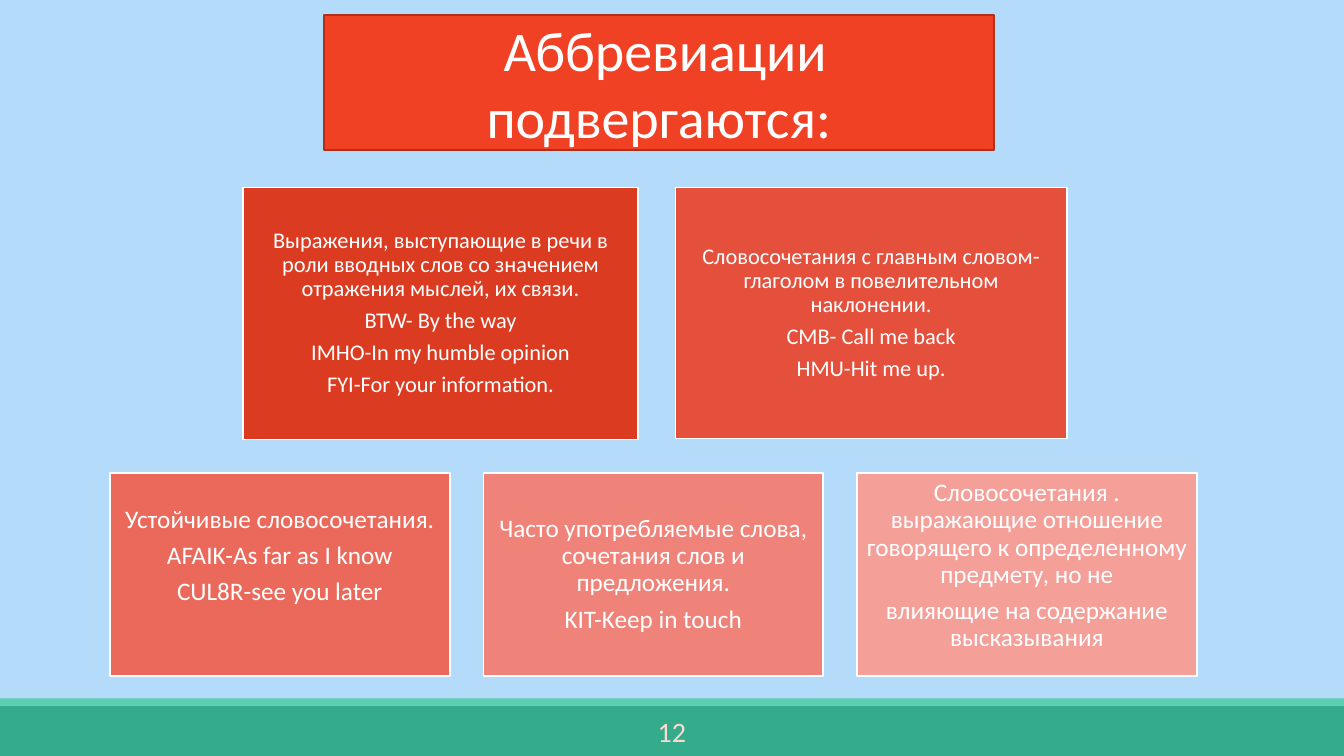
from dataclasses import dataclass

from pptx import Presentation
from pptx.dml.color import RGBColor
from pptx.enum.shapes import MSO_SHAPE
from pptx.enum.text import MSO_ANCHOR, PP_ALIGN
from pptx.shapes.autoshape import Shape
from pptx.slide import Slide
from pptx.util import Inches, Pt

RECTANGLE = MSO_SHAPE.RECTANGLE
CENTER = PP_ALIGN.CENTER
TOP = MSO_ANCHOR.TOP
MIDDLE = MSO_ANCHOR.MIDDLE


@dataclass(frozen=True)
class Theme:
    font: str = "Calibri"
    background: str = "B4DCFA"
    footer: str = "34AC8B"
    footer_edge: str = "5DCEAF"
    page_number: str = "FCD9D3"
    text: str = "FFFFFF"
    card_line: str = "FFFFFF"
    title_fill: str = "F14124"
    title_line: str = "B2301B"
    line_width: float = 1.25
    title_size: int = 40
    page_number_size: int = 20
    upper_size: int = 16
    lower_size: int = 18


THEME = Theme()


@dataclass(frozen=True)
class Box:
    left: float
    top: float
    width: float
    height: float


@dataclass(frozen=True)
class Card:
    box: Box
    fill: str
    size: int
    paragraphs: tuple[str, ...]
    anchor: MSO_ANCHOR = MIDDLE
    bottom_inset: float = 0.07


def lower_box(column: int) -> Box:
    return Box(1.09 + column * 3.705, 4.69, 3.37, 2.02)


CARDS = (
    Card(Box(2.41, 1.86, 3.92, 2.5), "DB3B21", THEME.upper_size, (
        "Выражения, выступающие в речи в роли вводных слов со значением "
        "отражения мыслей, их связи.",
        "BTW- By the way",
        "IMHO-In my humble opinion",
        "FYI-For your information.",
    )),
    Card(Box(6.7, 1.86, 3.88, 2.49), "E4503C", THEME.upper_size, (
        "Словосочетания с главным словом- глаголом в повелительном наклонении.",
        "CMB- Call me back",
        "HMU-Hit me up.",
    )),
    Card(lower_box(0), "EB695A", THEME.lower_size, (
        "Устойчивые словосочетания.",
        "AFAIK-As far as I know",
        "CUL8R-see you later",
    ), bottom_inset=0.43),
    Card(lower_box(1), "F08379", THEME.lower_size, (
        "Часто употребляемые слова, сочетания слов и предложения.",
        "KIT-Keep in touch",
    )),
    Card(lower_box(2), "F59F99", THEME.lower_size, (
        "Cловосочетания . выражающие отношение говорящего к определенному "
        "предмету, но не",
        "влияющие на содержание высказывания",
    ), anchor=TOP),
)


def add_rectangle(slide: Slide, box: Box, fill: str, line: str | None = None) -> Shape:
    shape = slide.shapes.add_shape(
        RECTANGLE, Inches(box.left), Inches(box.top),
        Inches(box.width), Inches(box.height))
    shape.shadow.inherit = False
    shape.fill.solid()
    shape.fill.fore_color.rgb = RGBColor.from_string(fill)
    if line is None:
        shape.line.fill.background()
    else:
        shape.line.color.rgb = RGBColor.from_string(line)
        shape.line.width = Pt(THEME.line_width)
    return shape


def write_text(shape: Shape, paragraphs: tuple[str, ...], size: int, color: str,
               line_spacing: float = 1.0, space_after: float = 0,
               anchor: MSO_ANCHOR = MIDDLE) -> None:
    frame = shape.text_frame
    frame.word_wrap = True
    frame.vertical_anchor = anchor
    frame.text = "\n".join(paragraphs)
    for paragraph in frame.paragraphs:
        paragraph.alignment = CENTER
        paragraph.line_spacing = line_spacing
        paragraph.space_after = Pt(space_after)
        paragraph.font.name = THEME.font
        paragraph.font.size = Pt(size)
        paragraph.font.color.rgb = RGBColor.from_string(color)


def add_card(slide: Slide, card: Card) -> None:
    shape = add_rectangle(slide, card.box, card.fill, THEME.card_line)
    frame = shape.text_frame
    frame.margin_left = frame.margin_right = frame.margin_top = Inches(0.07)
    frame.margin_bottom = Inches(card.bottom_inset)
    write_text(shape, card.paragraphs, card.size, THEME.text,
               line_spacing=0.9, space_after=0.35 * card.size, anchor=card.anchor)


def add_footer(slide: Slide) -> None:
    add_rectangle(slide, Box(0, 7, 13.33, 0.5), THEME.footer)
    add_rectangle(slide, Box(0, 6.93, 13.33, 0.07), THEME.footer_edge)
    page_number = slide.shapes.add_textbox(
        Inches(4.03), Inches(7.06), Inches(5.27), Inches(0.4))
    write_text(page_number, ("12",), THEME.page_number_size, THEME.page_number)


def main() -> None:
    presentation = Presentation()
    presentation.slide_width = Inches(13.33)
    presentation.slide_height = Inches(7.5)
    slide = presentation.slides.add_slide(presentation.slide_layouts[6])
    slide.background.fill.solid()
    slide.background.fill.fore_color.rgb = RGBColor.from_string(THEME.background)

    add_footer(slide)
    for card in CARDS:
        add_card(slide, card)
    title = add_rectangle(
        slide, Box(3.21, 0.15, 6.65, 1.34), THEME.title_fill, THEME.title_line)
    write_text(title, (" Аббревиации подвергаются:",), THEME.title_size, THEME.text)

    presentation.save("out.pptx")


if __name__ == "__main__":
    main()
